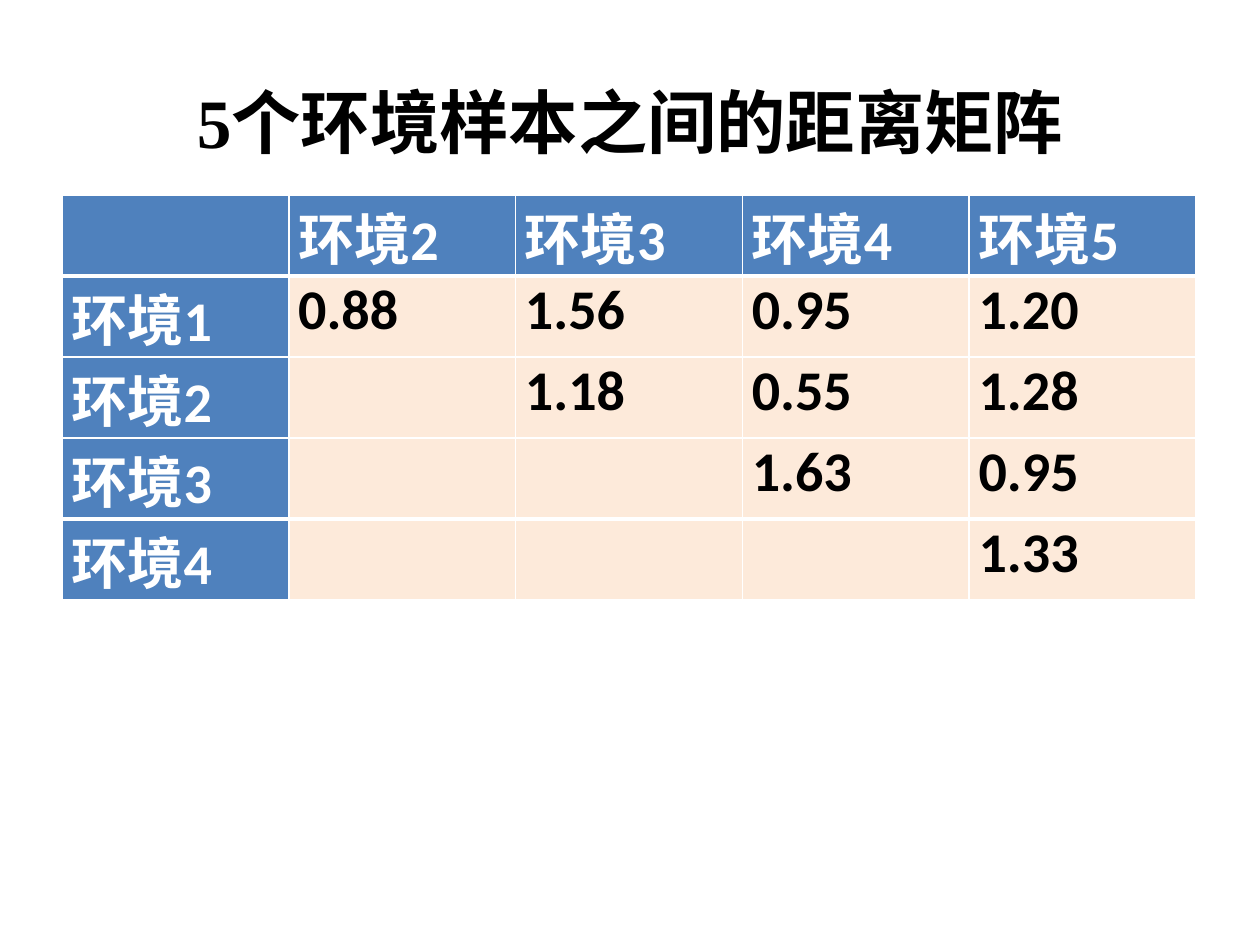
from lxml import etree
from pptx import Presentation
from pptx import util as u
from pptx.dml import color
from pptx.enum import text
from pptx.oxml import ns

COLORS = {"white": "FFFFFF", "black": "000000", "header": "4F81BD", "body": "FDEADA"}
TITLE = "5个环境样本之间的距离矩阵"
DISTANCES = [
    ["", "环境2", "环境3", "环境4", "环境5"],
    ["环境1", "0.88", "1.56", "0.95", "1.20"],
    ["环境2", "", "1.18", "0.55", "1.28"],
    ["环境3", "", "", "1.63", "0.95"],
    ["环境4", "", "", "", "1.33"],
]


def rgb(name):
    return color.RGBColor.from_string(COLORS[name])


def set_all(target, values):
    for name, value in values.items():
        setattr(target, name, value)


class SlideBuilder:
    title_font = {"name": "Times New Roman", "size": u.Pt(39.6), "bold": True}
    cell_font = {"name": "Calibri", "size": u.Pt(32), "bold": True}
    cell_margins = {"margin_left": u.Pt(5.4), "margin_right": u.Pt(5.4),
                    "margin_top": 0, "margin_bottom": 0}

    def __init__(self, slide):
        self.slide = slide

    def add_text(self, frame, content, font, font_color, alignment):
        paragraph = frame.paragraphs[0]
        paragraph.alignment = alignment
        run = paragraph.add_run()
        run.text = content
        set_all(run.font, font)
        run.font.color.rgb = rgb(font_color)

    def title(self, content, left, top, width, height):
        shape = self.slide.shapes.add_textbox(*map(u.Pt, (left, top, width, height)))
        set_all(shape.text_frame, {"word_wrap": True,
                                   "vertical_anchor": text.MSO_ANCHOR.MIDDLE})
        self.add_text(shape.text_frame, content, self.title_font, "black",
                      text.PP_ALIGN.CENTER)

    def borders(self, cell, widths):
        properties = cell._tc.get_or_add_tcPr()
        for index, (side, width) in enumerate(widths.items()):
            line = etree.Element(ns.qn(f"a:ln{side}"), w=str(u.Pt(width)))
            fill = etree.SubElement(line, ns.qn("a:solidFill"))
            etree.SubElement(fill, ns.qn("a:srgbClr"), val=COLORS["white"])
            properties.insert(index, line)

    def table(self, rows, left, top, column_width, row_height):
        row_count, column_count = len(rows), len(rows[0])
        table = self.slide.shapes.add_table(
            row_count, column_count, u.Pt(left), u.Pt(top),
            u.Pt(column_width * column_count), u.Pt(row_height * row_count)).table
        # Thick rules lie below the header and above the last row
        thick_rules = {1, row_count - 1}
        for row, values in enumerate(rows):
            for column, value in enumerate(values):
                cell = table.cell(row, column)
                is_header = row == 0 or column == 0
                set_all(cell, self.cell_margins)
                cell.fill.solid()
                cell.fill.fore_color.rgb = rgb("header" if is_header else "body")
                self.borders(cell, {"L": 1, "R": 1,
                                    "T": 3 if row in thick_rules else 1,
                                    "B": 3 if row + 1 in thick_rules else 1})
                if value:
                    self.add_text(cell.text_frame, value, self.cell_font,
                                  "white" if is_header else "black",
                                  text.PP_ALIGN.JUSTIFY)


def main():
    presentation = Presentation()
    set_all(presentation, {"slide_width": u.Pt(720), "slide_height": u.Pt(540)})
    builder = SlideBuilder(presentation.slides.add_slide(presentation.slide_layouts[6]))

    # Heading
    builder.title(TITLE, 36, 43.2, 648, 51.1)

    # Distance matrix
    builder.table(DISTANCES, 35.4, 111.5, 129.6, 46.3)

    presentation.save("out.pptx")


if __name__ == "__main__":
    main()
